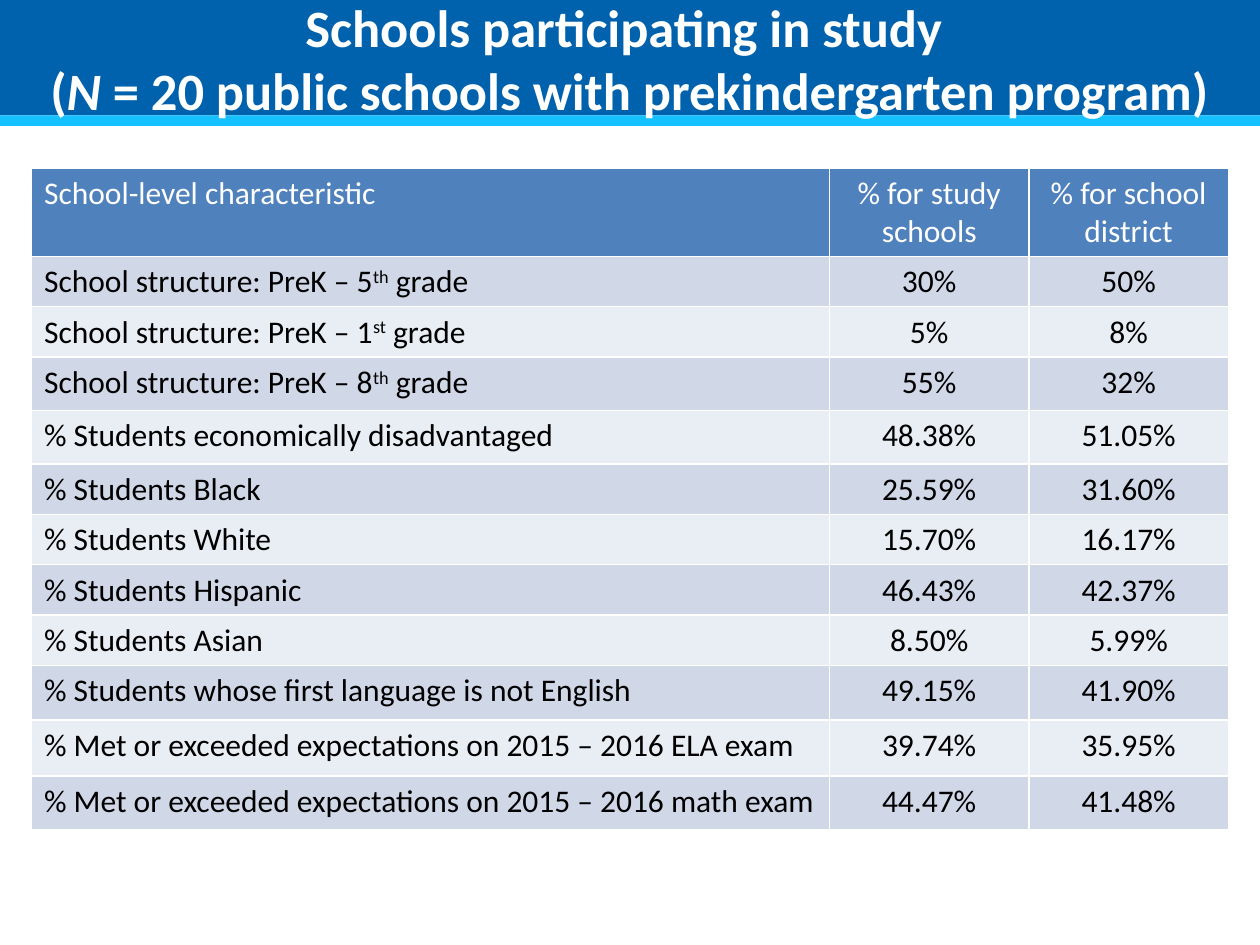
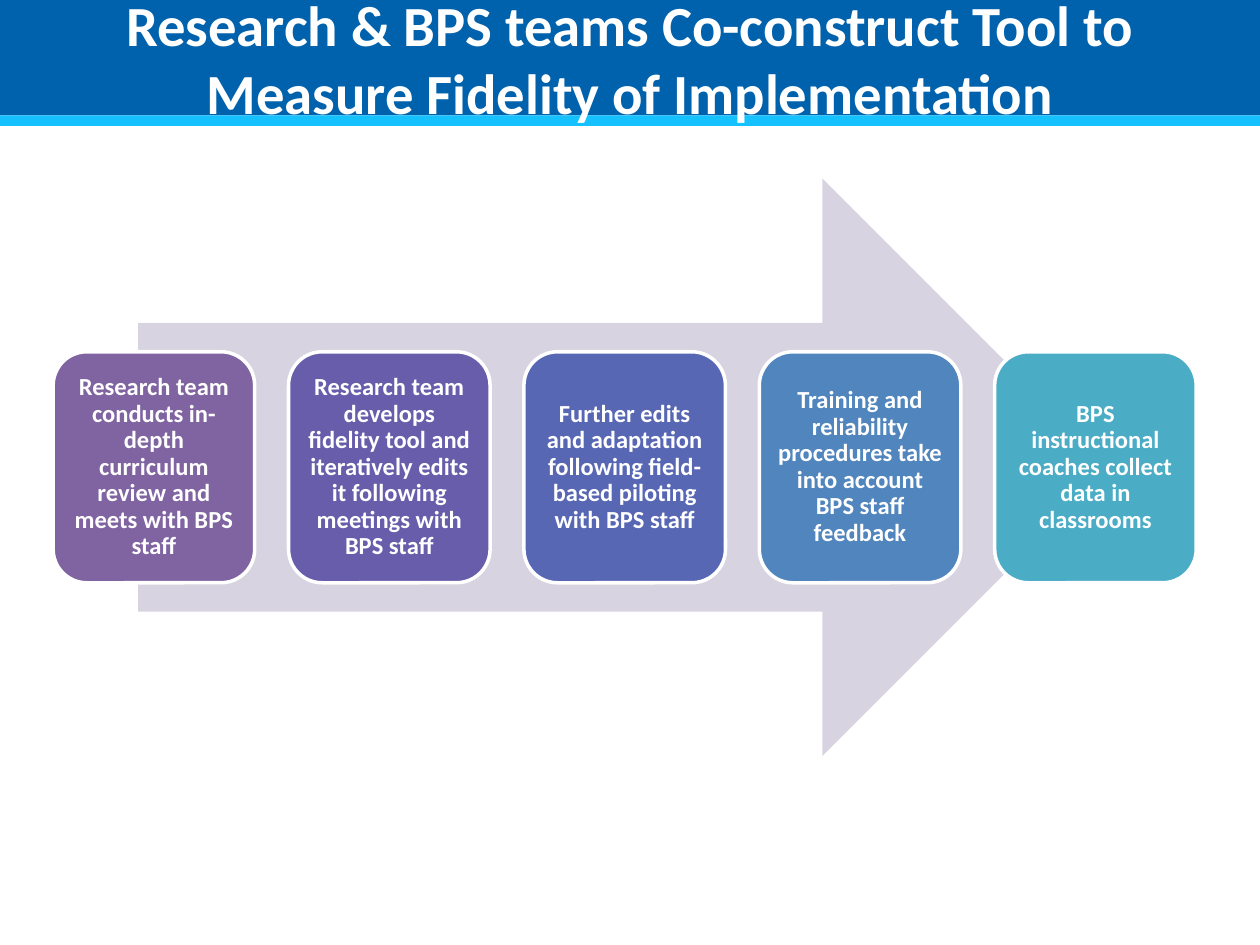
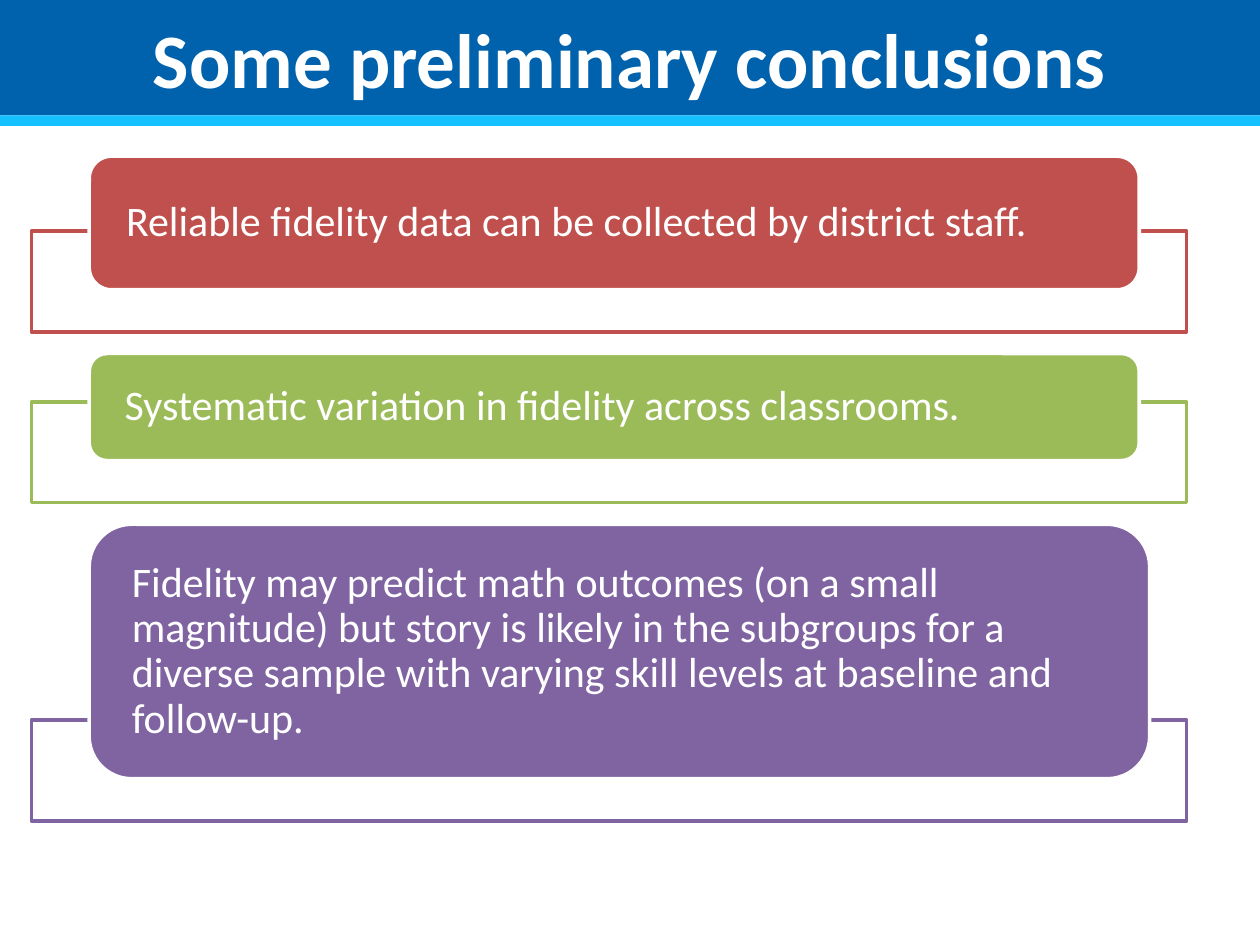
from dataclasses import dataclass

from lxml import etree
from pptx import Presentation
from pptx import util as u
from pptx.dml import color
from pptx.enum import shapes, text
from pptx.oxml import ns


@dataclass(frozen=True)
class Theme:
    font: str = "Calibri"
    white: str = "FFFFFF"
    ink: str = "000000"
    band: str = "0062AC"
    stripe: str = "15C2FF"
    header: str = "4F81BD"
    rows: tuple = ("D0D8E8", "E9EDF4")
    arrow: str = "D8D3E0"
    steps: tuple = ("8064A2", "685DAB", "5767B4", "5185BD", "4BACC6")
    conclusions: tuple = ("C0504D", "9BBB59", "8064A2")
    long_title: float = 30
    tool_title: float = 32.4
    short_title: float = 44
    body: float = 18
    step: float = 14
    conclusion: float = 24
    outline: float = 2
    border: float = 1


BREAK = "\n"
LEFT, CENTER = text.PP_ALIGN.LEFT, text.PP_ALIGN.CENTER
ROUNDED = shapes.MSO_SHAPE.ROUNDED_RECTANGLE
RECTANGLE = shapes.MSO_SHAPE.RECTANGLE


class Slides:
    def __init__(self, theme):
        self.theme = theme
        self.deck = Presentation()
        self.deck.slide_width = u.Pt(720)
        self.deck.slide_height = u.Pt(540)
        self.page = None

    def new_page(self, title, size, left=36):
        self.page = self.deck.slides.add_slide(self.deck.slide_layouts[6])
        self.shape(RECTANGLE, (0, -6, 720, 72), self.theme.band)
        self.shape(RECTANGLE, (0, 66, 720, 6), self.theme.stripe)
        box = self.page.shapes.add_textbox(*map(u.Pt, (left, 0, 720 - 2 * left, 66)))
        self.fill_frame(box.text_frame, title, size, margins=(7.2, 3.6), bold=True)

    def fill_frame(self, frame, spans, size, margins, align=CENTER, spacing=1.0, bold=False):
        side, end = map(u.Pt, margins)
        layout = {
            "word_wrap": True,
            "vertical_anchor": text.MSO_ANCHOR.MIDDLE,
            "margin_left": side,
            "margin_right": side,
            "margin_top": end,
            "margin_bottom": end,
        }
        for name, value in layout.items():
            setattr(frame, name, value)
        para = frame.paragraphs[0]
        para.line_spacing = spacing
        self.fill_paragraph(para, spans, size, self.theme.white, align, bold)

    def fill_paragraph(self, para, spans, size, ink, align, bold=False):
        para.alignment = align
        for words, extra in [(spans, {})] if isinstance(spans, str) else spans:
            if words == BREAK:
                para.add_line_break()
                continue
            span = para.add_run()
            span.text = words
            format_values = {"name": self.theme.font, "size": u.Pt(size), "bold": bold}
            for name, value in (format_values | extra).items():
                if name == "baseline":
                    span.font._element.set(name, value)
                else:
                    setattr(span.font, name, value)
            span.font.color.rgb = color.RGBColor.from_string(ink)

    def shape(self, kind, at, fill, line=None, alpha=None):
        shape = self.page.shapes.add_shape(kind, *map(u.Pt, at))
        shape.shadow.inherit = False
        shape.fill.solid()
        shape.fill.fore_color.rgb = color.RGBColor.from_string(fill)
        if alpha:
            tone = shape._element.spPr.find(ns.qn("a:solidFill"))[0]
            etree.SubElement(tone, ns.qn("a:alpha"), val=str(alpha * 1000))
        if line:
            shape.line.width = u.Pt(self.theme.outline)
            shape.line.color.rgb = color.RGBColor.from_string(line)
        else:
            shape.line.fill.background()
        return shape

    def card(self, at, fill, words, size, margins, align, bold=False):
        card = self.shape(ROUNDED, at, fill, self.theme.white)
        self.fill_frame(card.text_frame, words, size, margins, align, 0.9, bold)

    def table(self, at, columns, heights, rows):
        frame = self.page.shapes.add_table(len(rows), len(columns), *map(u.Pt, at))
        for column, width in zip(frame.table.columns, columns):
            column.width = u.Pt(width)
        for index, (row, height, words) in enumerate(zip(frame.table.rows, heights, rows)):
            row.height = u.Pt(height)
            fill = self.theme.rows[(index - 1) % 2] if index else self.theme.header
            ink = self.theme.ink if index else self.theme.white
            for place, (cell, spans) in enumerate(zip(row.cells, words)):
                self.borders(cell)
                cell.fill.solid()
                cell.fill.fore_color.rgb = color.RGBColor.from_string(fill)
                align = CENTER if place else LEFT
                para = cell.text_frame.paragraphs[0]
                self.fill_paragraph(para, spans, self.theme.body, ink, align)

    def borders(self, cell):
        properties = cell._tc.get_or_add_tcPr()
        for side in ("lnL", "lnR", "lnT", "lnB"):
            line = etree.SubElement(properties, ns.qn(f"a:{side}"), w=str(u.Pt(self.theme.border)))
            fill = etree.SubElement(line, ns.qn("a:solidFill"))
            etree.SubElement(fill, ns.qn("a:srgbClr"), val=self.theme.white)


def structure(grade, ending):
    return [
        (f"School structure: PreK – {grade}", {}),
        (ending, {"baseline": "30000"}),
        (" grade", {}),
    ]


def schools_page(slides):
    title = [
        ("Schools participating in study ", {}),
        (BREAK, {}),
        ("(", {}),
        ("N", {"italic": True}),
        (" = 20 public schools with prekindergarten program)", {}),
    ]
    slides.new_page(title, slides.theme.long_title, left=0)
    rows = [
        ("School-level characteristic", "% for study schools", "% for school district"),
        (structure(5, "th"), "30%", "50%"),
        (structure(1, "st"), "5%", "8%"),
        (structure(8, "th"), "55%", "32%"),
        ("% Students economically disadvantaged", "48.38%", "51.05%"),
        ("% Students Black", "25.59%", "31.60%"),
        ("% Students White", "15.70%", "16.17%"),
        ("% Students Hispanic", "46.43%", "42.37%"),
        ("% Students Asian", "8.50%", "5.99%"),
        ("% Students whose first language is not English", "49.15%", "41.90%"),
        ("% Met or exceeded expectations on 2015 – 2016 ELA exam", "39.74%", "35.95%"),
        ("% Met or exceeded expectations on 2015 – 2016 math exam", "44.47%", "41.48%"),
    ]
    heights = [49, 28, 28, 30.5, 30.5, 28, 28, 28, 28, 31, 32, 31]
    slides.table((18, 96, 684, sum(heights)), (456, 114, 114), heights, rows)


def fidelity_tool_page(slides):
    theme = slides.theme
    slides.new_page(
        "Research & BPS teams Co-construct Tool to Measure Fidelity of Implementation",
        theme.tool_title,
    )
    slides.shape(shapes.MSO_SHAPE.RIGHT_ARROW, (79, 102, 556, 330), theme.arrow)
    steps = [
        "Research team conducts in-depth curriculum review and meets with BPS staff",
        "Research team develops fidelity tool and iteratively edits it following "
        "meetings with BPS staff",
        "Further edits and adaptation following field-based piloting with BPS staff",
        "Training and reliability procedures take into account BPS staff feedback",
        "BPS instructional coaches collect data in classrooms",
    ]
    for index, (words, fill) in enumerate(zip(steps, theme.steps)):
        at = (30.4 + index * 134.5, 201, 115.2, 132)
        slides.card(at, fill, words, theme.step, (4.2, 4.2), CENTER, bold=True)


def conclusions_page(slides):
    theme = slides.theme
    slides.new_page("Some preliminary conclusions", theme.short_title)
    conclusions = [
        (600, 76.3, "Reliable fidelity data can be collected by district staff."),
        (600, 61.2, "Systematic variation in fidelity across classrooms."),
        (606, 145.4, "Fidelity may predict math outcomes (on a small magnitude) but story is "
                     "likely in the subgroups for a diverse sample with varying skill levels "
                     "at baseline and follow-up."),
    ]
    top = 89.3
    for (width, height, words), fill in zip(conclusions, theme.conclusions):
        bottom = top + height
        slides.shape(RECTANGLE, (18, bottom - 33.5, 660, 57.6), theme.white, fill, alpha=90)
        at = (51, top, width, height)
        slides.card(at, fill, words, theme.conclusion, (17.3, 0), LEFT)
        top = bottom + 36.4


def main():
    slides = Slides(Theme())
    schools_page(slides)
    fidelity_tool_page(slides)
    conclusions_page(slides)
    slides.deck.save("out.pptx")


if __name__ == "__main__":
    main()
